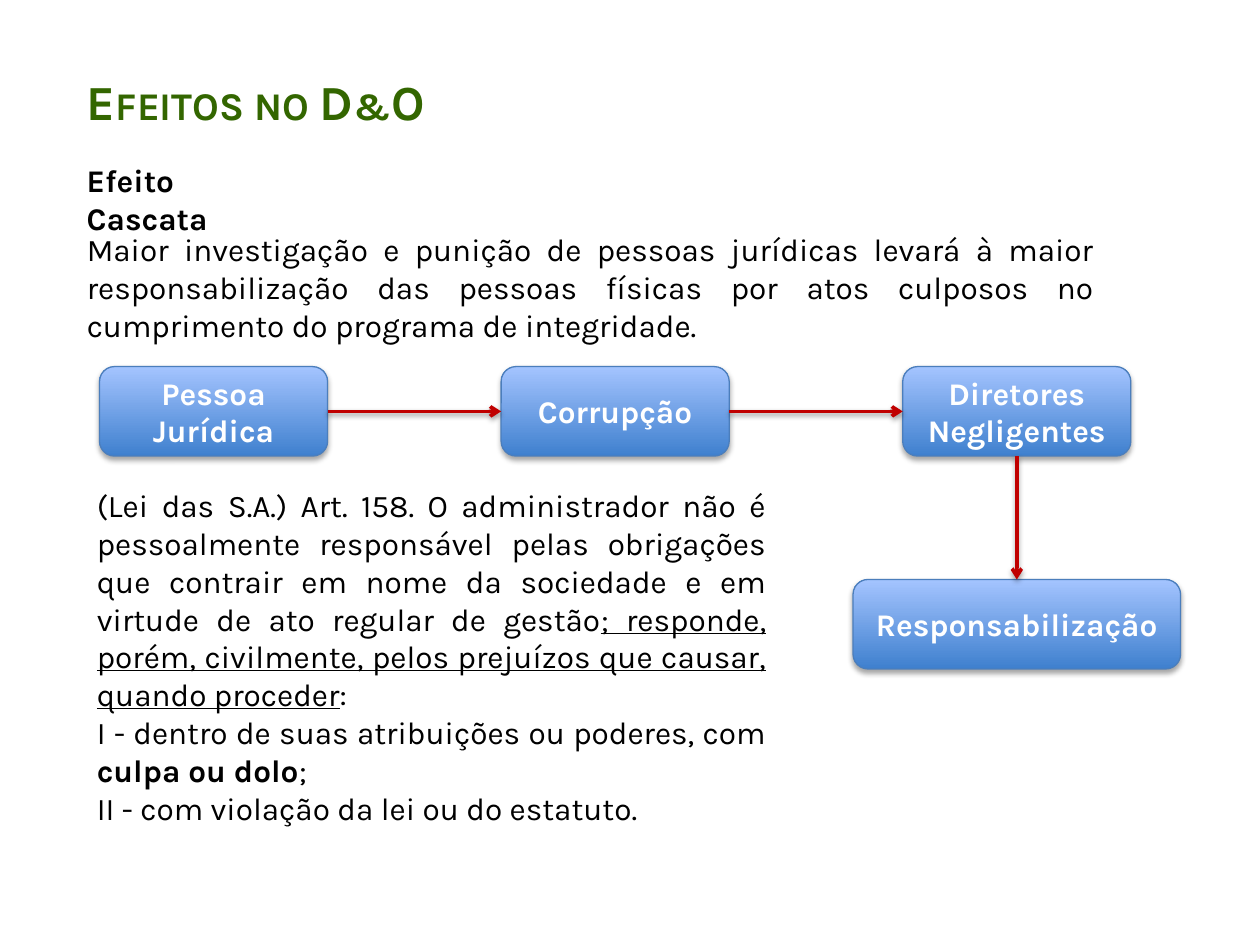
from collections import namedtuple

from lxml import etree
from pptx import Presentation
from pptx.dml.color import RGBColor
from pptx.enum.shapes import MSO_CONNECTOR, MSO_SHAPE
from pptx.enum.text import MSO_ANCHOR, PP_ALIGN
from pptx.oxml.ns import qn
from pptx.util import Inches, Pt

FONT = "Karla"
GREEN = RGBColor(0x33, 0x66, 0x00)
BLACK = RGBColor(0x00, 0x00, 0x00)
WHITE = RGBColor(0xFF, 0xFF, 0xFF)
RED = RGBColor(0xC0, 0x00, 0x00)
BLUE_DARK = RGBColor(0x3F, 0x80, 0xCE)
BLUE_LIGHT = RGBColor(0xA4, 0xC4, 0xFF)
BLUE_LINE = RGBColor(0x4B, 0x7E, 0xBC)

SLIDE_WIDTH, SLIDE_HEIGHT = Inches(10), Inches(7.5)
TOP, LEFT, BOTTOM, RIGHT = range(4)
Box = namedtuple("Box", "left top width height")


def share(left, top, width, height):
    return Box(int(SLIDE_WIDTH * left / 100), int(SLIDE_HEIGHT * top / 100),
               int(SLIDE_WIDTH * width / 100), int(SLIDE_HEIGHT * height / 100))


def style(paragraph, color, size=18, bold=None, align=PP_ALIGN.LEFT):
    paragraph.alignment = align
    font = paragraph.font
    font.name, font.size, font.bold = FONT, Pt(size), bold
    font.color.rgb = color


def add_shadow(shape, distance, opacity):
    properties = shape._element.spPr
    effects = properties.find(qn("a:effectLst"))
    if effects is None:
        effects = etree.SubElement(properties, qn("a:effectLst"))
    shadow = etree.SubElement(effects, qn("a:outerShdw"), blurRad=str(Pt(3.1)),
                              dist=str(Pt(distance)), dir="5400000", rotWithShape="0")
    color = etree.SubElement(shadow, qn("a:srgbClr"), val=str(BLACK))
    etree.SubElement(color, qn("a:alpha"), val=str(opacity * 1000))


def add_title(slide, box, text):
    title = slide.shapes.title
    title.left, title.top, title.width, title.height = box
    frame = title.text_frame
    frame.vertical_anchor = MSO_ANCHOR.TOP
    paragraph = frame.paragraphs[0]
    run = paragraph.add_run()
    run.text = text
    style(paragraph, GREEN, 28, True)
    run.font._element.set("cap", "small")


def add_text(slide, box, paragraphs, bold=None, align=PP_ALIGN.JUSTIFY):
    frame = slide.shapes.add_textbox(*box).text_frame
    frame.word_wrap = True
    for index, pieces in enumerate(paragraphs):
        paragraph = frame.add_paragraph() if index else frame.paragraphs[0]
        style(paragraph, BLACK, bold=bold, align=align)
        for text, emphasis in pieces:
            run = paragraph.add_run()
            run.text = text
            if emphasis:
                setattr(run.font, emphasis, True)


def add_node(slide, box, text):
    node = slide.shapes.add_shape(MSO_SHAPE.ROUNDED_RECTANGLE, *box)
    node.fill.gradient()
    node.fill.gradient_angle = 90
    for stop, color in zip(node.fill.gradient_stops, (BLUE_DARK, BLUE_LIGHT)):
        stop.color.rgb = color
    node.line.color.rgb = BLUE_LINE
    node.line.width = Pt(0.75)
    node.shadow.inherit = False
    add_shadow(node, 1.8, 35)
    frame = node.text_frame
    frame.word_wrap = True
    frame.vertical_anchor = MSO_ANCHOR.MIDDLE
    frame.text = text
    style(frame.paragraphs[0], WHITE, bold=True, align=PP_ALIGN.CENTER)
    return node


def add_arrow(slide, start, start_site, end, end_site):
    arrow = slide.shapes.add_connector(MSO_CONNECTOR.STRAIGHT, 0, 0, 0, 0)
    arrow.begin_connect(start, start_site)
    arrow.end_connect(end, end_site)
    arrow.line.color.rgb = RED
    arrow.line.width = Pt(2)
    etree.SubElement(arrow.line._get_or_add_ln(), qn("a:tailEnd"), type="arrow")
    add_shadow(arrow, 1.6, 38)


def add_cascade(slide, box, causes, outcome):
    node_width, node_height = int(box.width * 0.211), int(box.height * 0.296)
    outcome_width = int(box.width * 0.303)
    outcome_left = box.left + box.width - outcome_width
    last_left = outcome_left + (outcome_width - node_width) // 2
    pitch = (last_left - box.left) // (len(causes) - 1)
    nodes = [add_node(slide, Box(box.left + index * pitch, box.top, node_width, node_height), text)
             for index, text in enumerate(causes)]
    outcome_top = box.top + box.height - node_height
    result = add_node(slide, Box(outcome_left, outcome_top, outcome_width, node_height), outcome)
    for start, end in zip(nodes, nodes[1:]):
        add_arrow(slide, start, RIGHT, end, LEFT)
    add_arrow(slide, nodes[-1], BOTTOM, result, TOP)


def main():
    presentation = Presentation()
    presentation.slide_width, presentation.slide_height = SLIDE_WIDTH, SLIDE_HEIGHT
    slide = presentation.slides.add_slide(presentation.slide_layouts.get_by_name("Title Only"))
    add_title(slide, share(5.9, 6.93, 89, 7.6), "Efeitos no D&O")
    add_text(slide, share(5.9, 16.4, 18.7, 5.33), [[("Efeito Cascata", None)]],
             bold=True, align=PP_ALIGN.LEFT)
    add_text(slide, share(5.9, 23.73, 81.9, 13.5), [[(
        "Maior investigação e punição de pessoas jurídicas levará à maior responsabilização "
        "das pessoas físicas por atos culposos no cumprimento do programa de integridade.", None)]])
    add_cascade(slide, share(7.9, 38.8, 85.8, 32),
                ["Pessoa Jurídica", "Corrupção", "Diretores Negligentes"], "Responsabilização")
    add_text(slide, share(6.7, 50.8, 55.1, 37.73), [
        [("(Lei das S.A.) Art. 158. O administrador não é pessoalmente responsável pelas "
          "obrigações que contrair em nome da sociedade e em virtude de ato regular de gestão", None),
         ("; responde, porém, civilmente, pelos prejuízos que causar, quando proceder", "underline"),
         (":", None)],
        [("I - dentro de suas atribuições ou poderes, com ", None),
         ("culpa ou dolo", "bold"), (";", None)],
        [("II - com violação da lei ou do estatuto.", None)],
    ])
    presentation.save("out.pptx")


if __name__ == "__main__":
    main()
